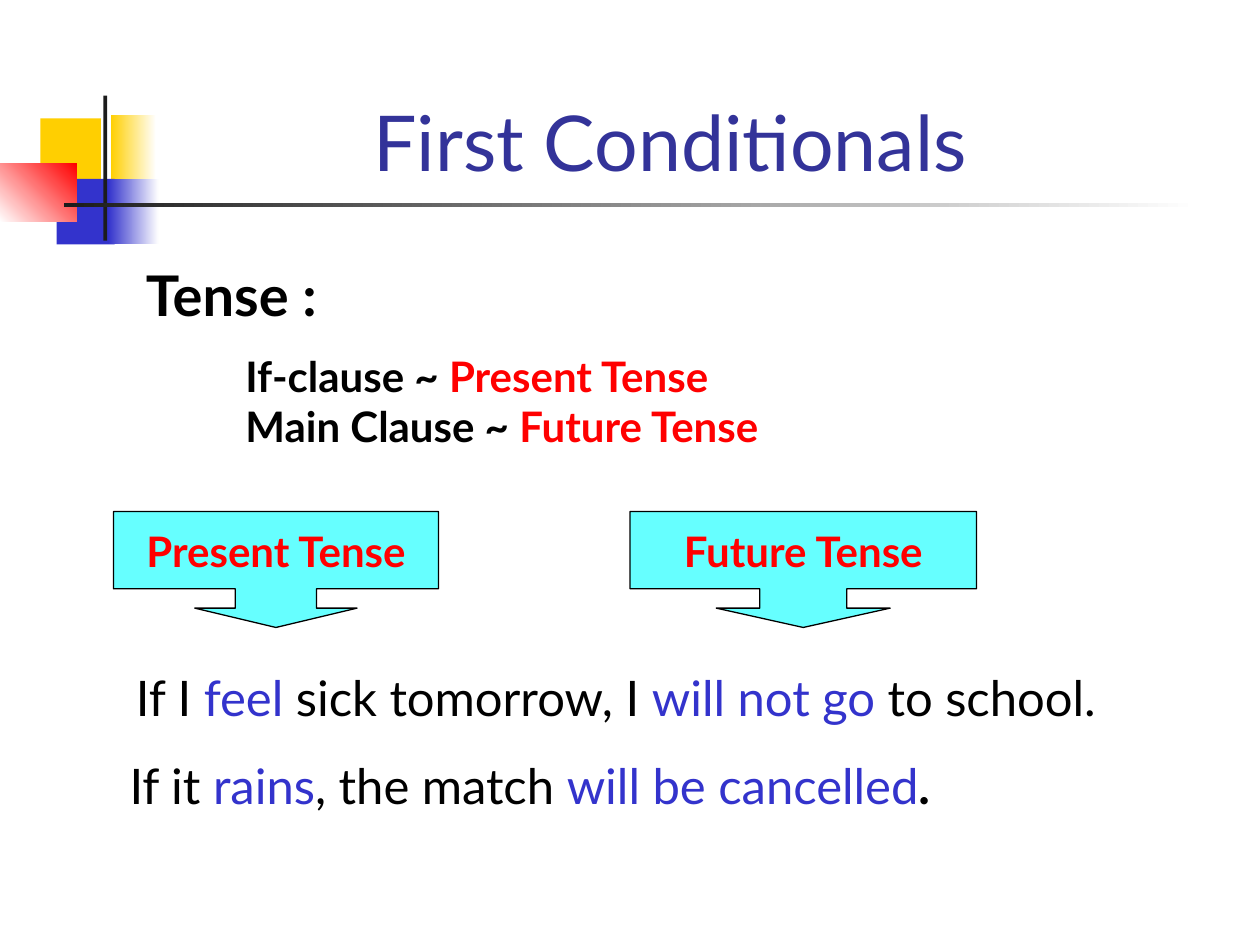
import pptx
import pptx.util
import pptx.dml.color
import pptx.enum.shapes
import pptx.enum.text

# The page is a grid of 10 columns by 7.5 rows; boxes are (left, top, width, height)
COLUMNS, ROWS = 10, 7.5
CELL = pptx.util.Inches(1)
FONT = "Lato"
BLACK, WHITE, RED, BLUE = "000000", "FFFFFF", "FF0000", "3333CC"
YELLOW, CHARCOAL, TITLE_BLUE, CYAN = "FFCF01", "1C1C1C", "333399", "66FFFF"

SHAPES = pptx.enum.shapes.MSO_SHAPE
ALIGN = pptx.enum.text.PP_ALIGN
ANCHOR = pptx.enum.text.MSO_ANCHOR


def color(value):
    return pptx.dml.color.RGBColor.from_string(value)


def grid(box):
    return [round(length * CELL) for length in box]


def within(box, left, top, width, height):
    """Offset a part's place by the corner of its region."""
    return box[0] + left, box[1] + top, width, height


def write(frame, paragraphs, size=24, bold=False, align=ALIGN.LEFT,
          anchor=ANCHOR.TOP, wrap=True):
    """Fill a frame; each paragraph is a list of (text, colour[, bold])."""
    frame.word_wrap = wrap
    frame.vertical_anchor = anchor
    for index, spans in enumerate(paragraphs):
        para = frame.paragraphs[0] if index == 0 else frame.add_paragraph()
        para.alignment = align
        for text, ink, *weight in spans:
            span = para.add_run()
            span.text = text
            span.font.name = FONT
            span.font.size = pptx.util.Pt(size)
            span.font.bold = weight[0] if weight else bold
            span.font.color.rgb = color(ink)


def add_text(page, box, paragraphs, **style):
    write(page.shapes.add_textbox(*grid(box)).text_frame, paragraphs, **style)


def add_block(page, box, start, end=None, angle=0):
    """Borderless rectangle, plain or fading from start to end."""
    block = page.shapes.add_shape(SHAPES.RECTANGLE, *grid(box))
    block.shadow.inherit = False
    block.line.fill.background()
    if end is None:
        block.fill.solid()
        block.fill.fore_color.rgb = color(start)
    else:
        block.fill.gradient()
        block.fill.gradient_angle = angle
        for stop, ink, position in zip(block.fill.gradient_stops, (start, end), (0, 1)):
            stop.color.rgb = color(ink)
            stop.position = position


def draw_ornament(page, box):
    # Coloured squares
    add_block(page, within(box, 0.32, 0.18, 0.48, 0.52), YELLOW)
    add_block(page, within(box, 0.88, 0.15, 0.36, 0.52), YELLOW, WHITE)
    add_block(page, within(box, 0.45, 0.66, 0.46, 0.52), BLUE)
    add_block(page, within(box, 0.86, 0.66, 0.4, 0.52), BLUE, WHITE)
    add_block(page, within(box, 0, 0.54, 0.61, 0.46), WHITE, RED, angle=45)
    # Crossing bars
    add_block(page, within(box, 0.82, 0, 0.03, 1.15), CHARCOAL)
    add_block(page, within(box, 0.51, 0.85, 9, 0.03), CHARCOAL, WHITE)


def draw_tenses(page, box):
    # Heading and the rule for each clause
    add_text(page, within(box, 0, 0, box[2], 0.63), [[("Tense :", BLACK)]],
             size=32, bold=True)
    rules = [("If-clause ~ ", "Present Tense"), ("Main Clause ~ ", "Future Tense")]
    add_text(page, within(box, 0.79, 0.71, 6.6, 0.9),
             [[(clause, BLACK), (tense, RED)] for clause, tense in rules], bold=True)


def draw_callout(page, box, label, shaft):
    callout = page.shapes.add_shape(SHAPES.DOWN_ARROW_CALLOUT, *grid(box))
    callout.shadow.inherit = False
    callout.fill.solid()
    callout.fill.fore_color.rgb = color(CYAN)
    callout.line.color.rgb = color(BLACK)
    callout.line.width = pptx.util.Pt(0.75)
    for index, share in enumerate((shaft, shaft, 1 / 6, 2 / 3)):
        callout.adjustments[index] = share
    write(callout.text_frame, [[(label, RED)]], bold=True, align=ALIGN.CENTER,
          anchor=ANCHOR.MIDDLE, wrap=False)


def draw_examples(page, box):
    add_text(page, within(box, 0.05, 0, box[2], 0.57),
             [[("If I ", BLACK), ("feel", BLUE), (" sick tomorrow, I ", BLACK),
               ("will not go", BLUE), (" to school.", BLACK)]], size=28)
    add_text(page, within(box, 0, 0.7, box[2], 0.57),
             [[("If it ", BLACK), ("rains", BLUE), (", the match ", BLACK),
               ("will be cancelled", BLUE), (".", BLACK, True)]], size=28)


def main():
    deck = pptx.Presentation()
    deck.slide_width, deck.slide_height = grid((COLUMNS, ROWS))
    page = deck.slides.add_slide(deck.slide_layouts[6])

    draw_ornament(page, (0, 0.76, 9.5, 1.18))
    add_text(page, (1.06, 0.28, 8.52, 1.25), [[("First Conditionals", TITLE_BLUE)]],
             size=44, align=ALIGN.CENTER, anchor=ANCHOR.BOTTOM)
    draw_tenses(page, (1.06, 2.02, 8.74, 1.61))
    draw_callout(page, (0.9, 4.06, 2.58, 0.92), "Present Tense", 0.7)
    draw_callout(page, (5, 4.06, 2.75, 0.92), "Future Tense", 0.75)
    draw_examples(page, (0.93, 5.25, 8.3, 1.27))

    deck.save("out.pptx")


if __name__ == "__main__":
    main()
